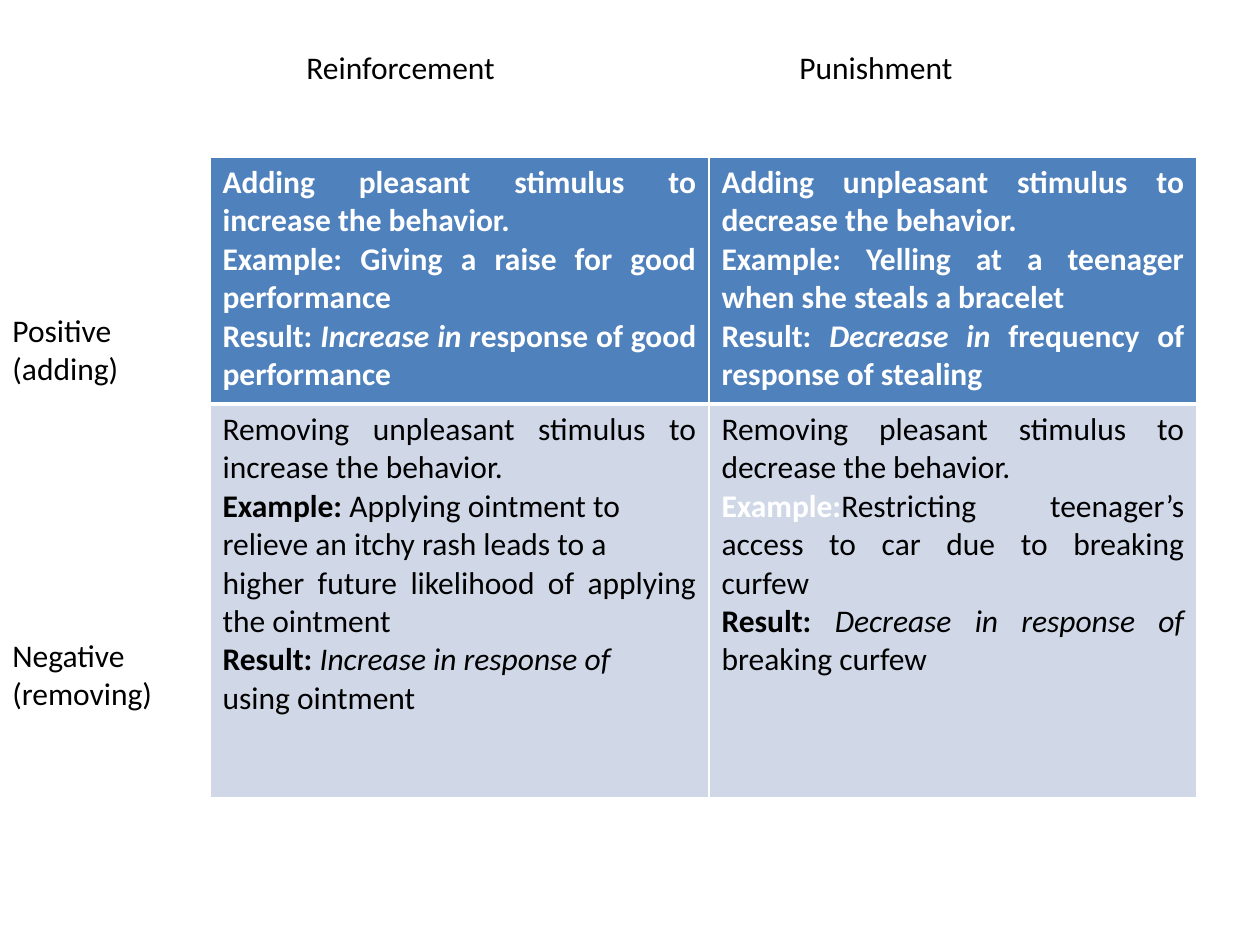
from dataclasses import dataclass

import lxml.etree
import pptx
import pptx.dml.color
import pptx.enum.text
import pptx.oxml.ns
import pptx.util


@dataclass(frozen=True)
class Theme:
    font: str = "Calibri"
    size: int = 18
    dark: str = "000000"
    light: str = "FFFFFF"
    positive_fill: str = "4F81BD"
    negative_fill: str = "D0D8E8"
    thin: int = 1
    thick: int = 3


theme = Theme()
EMU_PER_PX = 914400 / 126
rgb = pptx.dml.color.RGBColor.from_string


def px(length):
    return pptx.util.Emu(round(length * EMU_PER_PX))


def style_font(font, color):
    font.name = theme.font
    font.size = pptx.util.Pt(theme.size)
    font.color.rgb = rgb(color)


deck = pptx.Presentation()
deck.slide_width, deck.slide_height = px(1260), px(945)
slide = deck.slides.add_slide(deck.slide_layouts[6])

# Each paragraph is a list of (text, style): b bold, i italic, w white.
positive_reinforcement = [
    [("Adding pleasant stimulus to increase the behavior.", "b")],
    [("Example: Giving a raise for good performance", "b")],
    [("Result: ", "b"), ("Increase in r", "bi"), ("esponse of good performance", "b")],
]
positive_punishment = [
    [("Adding unpleasant stimulus to decrease the behavior.", "b")],
    [("Example: Yelling at a teenager when she steals a bracelet", "b")],
    [("Result: ", "b"), ("Decrease in ", "bi"), ("frequency of response of stealing", "b")],
]
negative_reinforcement = [
    [("Removing unpleasant stimulus to increase the behavior.", "")],
    [("Example: ", "b"), ("Applying ointment to", "")],
    [("relieve an itchy rash leads to a", "")],
    [("higher future likelihood of applying the ointment", "")],
    [("Result: ", "b"), ("Increase in response of", "i")],
    [("using ointment", "")],
]
negative_punishment = [
    [("Removing pleasant stimulus to decrease the behavior.", "")],
    [("Example:", "bw"), ("Restricting teenager’s access to car due to breaking curfew", "")],
    [("Result: ", "b"), ("Decrease in response of ", "i"), ("breaking curfew", "")],
]

# (height, fill, text colour, width of bottom border, cells)
matrix_rows = [
    (247, theme.positive_fill, theme.light, theme.thick,
     [positive_reinforcement, positive_punishment]),
    (394, theme.negative_fill, theme.dark, theme.thin,
     [negative_reinforcement, negative_punishment]),
]
column_widths = [499, 488]

matrix = slide.shapes.add_table(
    len(matrix_rows), len(column_widths), px(210), px(157),
    px(sum(column_widths)), px(sum(row[0] for row in matrix_rows))).table
for column, width in zip(matrix.columns, column_widths):
    column.width = px(width)

for row_index, (height, fill, color, bottom, contents) in enumerate(matrix_rows):
    matrix.rows[row_index].height = px(height)
    for column_index, paragraphs in enumerate(contents):
        cell = matrix.cell(row_index, column_index)
        properties = cell._tc.get_or_add_tcPr()
        borders = {"lnL": theme.thin, "lnR": theme.thin, "lnT": theme.thin, "lnB": bottom}
        for side, width in borders.items():
            line = lxml.etree.SubElement(
                properties, pptx.oxml.ns.qn(f"a:{side}"), w=str(pptx.util.Pt(width)))
            solid = lxml.etree.SubElement(line, pptx.oxml.ns.qn("a:solidFill"))
            lxml.etree.SubElement(solid, pptx.oxml.ns.qn("a:srgbClr"), val=theme.light)
        cell.fill.solid()
        cell.fill.fore_color.rgb = rgb(fill)

        for index, runs in enumerate(paragraphs):
            frame = cell.text_frame
            paragraph = frame.add_paragraph() if index else frame.paragraphs[0]
            paragraph.alignment = pptx.enum.text.PP_ALIGN.JUSTIFY
            style_font(paragraph.font, color)
            for text, style in runs:
                run = paragraph.add_run()
                run.text = text
                run.font.bold = "b" in style
                run.font.italic = "i" in style
                if "w" in style:
                    run.font.color.rgb = rgb(theme.light)

headings = [
    ("Reinforcement", 294, 42, 273, 50),
    ("Punishment", 787, 42, 231, 50),
    ("Positive (adding)", 0, 305, 210, 89),
    ("Negative (removing)", 0, 630, 252, 89),
]
for text, left, top, width, height in headings:
    frame = slide.shapes.add_textbox(px(left), px(top), px(width), px(height)).text_frame
    frame.word_wrap = True
    frame.auto_size = pptx.enum.text.MSO_AUTO_SIZE.SHAPE_TO_FIT_TEXT
    heading = frame.paragraphs[0]
    heading.text = text
    style_font(heading.font, theme.dark)

deck.save("out.pptx")
